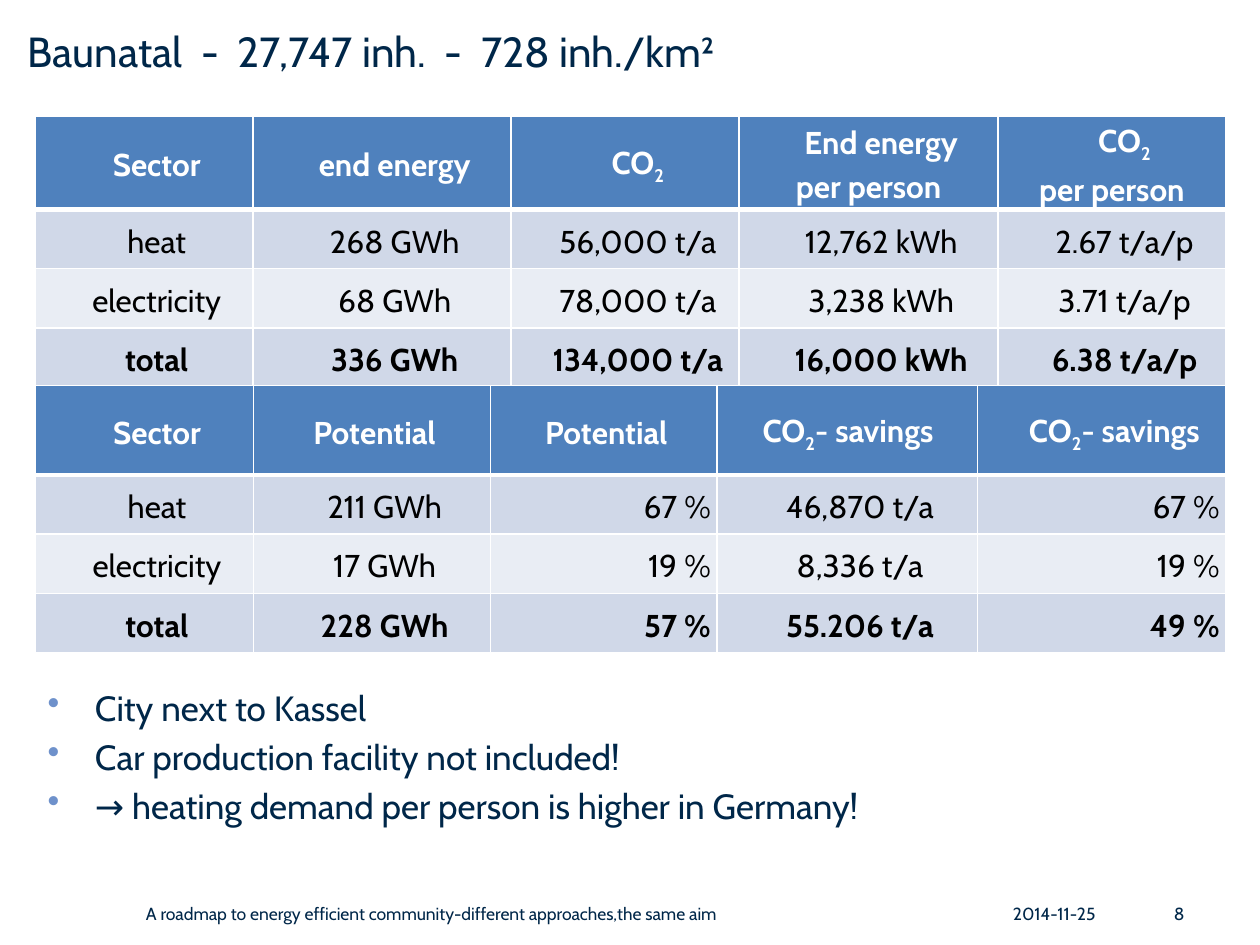
from lxml.etree import SubElement
from pptx import Presentation
from pptx.dml.color import RGBColor
from pptx.enum.text import MSO_ANCHOR, MSO_AUTO_SIZE, PP_ALIGN
from pptx.oxml.ns import qn
from pptx.util import Pt

FONT = "Cabin"
NAVY = RGBColor(0x00, 0x27, 0x49)
BLUE = RGBColor(0x4F, 0x81, 0xBD)
BAND_DARK = RGBColor(0xD0, 0xD8, 0xE8)
BAND_LIGHT = RGBColor(0xE9, 0xED, 0xF4)
BULLET_BLUE = RGBColor(0x6E, 0x91, 0xCB)
WHITE = RGBColor(0xFF, 0xFF, 0xFF)
BLACK = RGBColor(0x00, 0x00, 0x00)

TABLE_LEFT, TABLE_WIDTH = 20.16, 680.4
ROW_HEIGHT = 33.84
INDENT = 14.4

# "₂" marks a subscript 2, "\v" a line break
CONSUMPTION = [
    ["Sector", "end energy", "CO₂", "End energy\vper person", "CO₂\vper person"],
    ["heat", "268 GWh", "56,000 t/a", "12,762 kWh", "2.67 t/a/p"],
    ["electricity", "68 GWh", "78,000 t/a", "3,238 kWh", "3.71 t/a/p"],
    ["total", "336 GWh", "134,000 t/a", "16,000 kWh", "6.38 t/a/p"],
]
SAVINGS = [
    ["Sector", "Potential", "Potential", "CO₂- savings", "CO₂- savings"],
    ["heat", "211 GWh", "67 %", "46,870 t/a", "67 %"],
    ["electricity", "17 GWh", "19 %", "8,336 t/a", "19 %"],
    ["total", "228 GWh", "57 %", "55.206 t/a", "49 %"],
]
REMARKS = [
    "City next to Kassel",
    "Car production facility not included!",
    "→ heating demand per person is higher in Germany!",
]


def format_font(paragraph, size, color, bold=False):
    font = paragraph.font
    font.name, font.size, font.bold = FONT, Pt(size), bold
    font.color.rgb = color


def add_text(slide, text, left, top, width, height, align=PP_ALIGN.LEFT):
    """Small footer text, centred vertically in its box."""
    frame = slide.shapes.add_textbox(Pt(left), Pt(top), Pt(width), Pt(height)).text_frame
    frame.word_wrap = True
    frame.vertical_anchor = MSO_ANCHOR.MIDDLE
    paragraph = frame.paragraphs[0]
    paragraph.text = text
    paragraph.alignment = align
    format_font(paragraph, 10, NAVY)


def set_title(slide, text):
    title = slide.shapes.title
    title.left, title.top, title.width, title.height = Pt(8.64), Pt(10.8), Pt(686.16), Pt(45.36)
    frame = title.text_frame
    frame.auto_size = MSO_AUTO_SIZE.NONE
    frame.vertical_anchor = MSO_ANCHOR.TOP
    paragraph = frame.paragraphs[0]
    paragraph.text = text
    paragraph.alignment = PP_ALIGN.LEFT
    format_font(paragraph, 24, NAVY)


def set_borders(cell, bottom):
    properties = cell._tc.get_or_add_tcPr()
    for side, width in (("L", 1), ("R", 1), ("T", 1), ("B", bottom)):
        line = SubElement(properties, qn(f"a:ln{side}"), w=str(Pt(width)))
        fill = SubElement(line, qn("a:solidFill"))
        SubElement(fill, qn("a:srgbClr"), val=str(WHITE))


def write_cell_text(paragraph, text):
    before, subscript, after = text.partition("₂")
    paragraph.text = before
    if subscript:
        run = paragraph.add_run()
        run.text = "2"
        run._r.get_or_add_rPr().set("baseline", "-25000")
    if after.startswith("\v"):
        paragraph.add_line_break()
    if after:
        paragraph.add_run().text = after.lstrip("\v")


def format_cell(cell, text, row, last_row, indent):
    is_header = row == 0
    cell.margin_left = cell.margin_right = Pt(3.6)
    cell.margin_top = cell.margin_bottom = Pt(0)
    cell.vertical_anchor = MSO_ANCHOR.MIDDLE
    set_borders(cell, 3 if is_header else 1)
    cell.fill.solid()
    cell.fill.fore_color.rgb = BLUE if is_header else (BAND_LIGHT, BAND_DARK)[row % 2]

    paragraph = cell.text_frame.paragraphs[0]
    write_cell_text(paragraph, text)
    paragraph.alignment = PP_ALIGN.RIGHT if text.endswith("%") else PP_ALIGN.CENTER
    paragraph.line_spacing = 1.15
    paragraph._p.get_or_add_pPr().set("indent", str(Pt(indent)))
    format_font(paragraph, 18, WHITE if is_header else BLACK, is_header or row == last_row)


def add_energy_table(slide, rows, top, header_height, widths, header_indents):
    height = header_height + ROW_HEIGHT * (len(rows) - 1)
    table = slide.shapes.add_table(
        len(rows), len(widths), Pt(TABLE_LEFT), Pt(top), Pt(TABLE_WIDTH), Pt(height)
    ).table
    for column, width in zip(table.columns, widths):
        column.width = Pt(width)
    for r, texts in enumerate(rows):
        table.rows[r].height = Pt(ROW_HEIGHT if r else header_height)
        for c, text in enumerate(texts):
            indent = INDENT if r else header_indents[c]
            format_cell(table.cell(r, c), text, r, len(rows) - 1, indent)


def add_bullets(slide, remarks):
    frame = slide.shapes.add_textbox(
        Pt(TABLE_LEFT), Pt(388.8), Pt(TABLE_WIDTH), Pt(79.2)
    ).text_frame
    frame.word_wrap = True
    for i, remark in enumerate(remarks):
        paragraph = frame.add_paragraph() if i else frame.paragraphs[0]
        paragraph.text = remark
        if i:
            paragraph.space_before = Pt(4)
        properties = paragraph._p.get_or_add_pPr()
        properties.set("marL", str(Pt(27)))
        properties.set("indent", str(Pt(-27)))
        color = SubElement(properties, qn("a:buClr"))
        SubElement(color, qn("a:srgbClr"), val=str(BULLET_BLUE))
        SubElement(properties, qn("a:buChar"), char="•")
        format_font(paragraph, 20, NAVY)


def main():
    presentation = Presentation()
    presentation.slide_width, presentation.slide_height = Pt(720), Pt(540)
    slide = presentation.slides.add_slide(presentation.slide_layouts[5])

    set_title(slide, "Baunatal  -  27,747 inh.  -  728 inh./km²")

    # Current consumption, then savings potential
    add_energy_table(slide, CONSUMPTION, 66.24, 46.08,
                     [124.4, 147.6, 130.3, 147.8, 130.3], [INDENT] * 5)
    add_energy_table(slide, SAVINGS, 220.32, 51.12,
                     [124.7, 135.5, 129.4, 149, 141.8], [INDENT, 2.88, 2.88, 0.72, INDENT])

    add_bullets(slide, REMARKS)

    # Footer
    footer_top, footer_height = 507.6, 28.8
    add_text(slide, "A roadmap to energy efficient community-different approaches,the same aim",
             76.32, footer_top, 465.12, footer_height)
    add_text(slide, "2014-11-25", 571.68, footer_top, 66.24, footer_height)
    add_text(slide, "8", 637.92, footer_top, 46.08, footer_height, PP_ALIGN.RIGHT)

    presentation.save("out.pptx")


if __name__ == "__main__":
    main()
